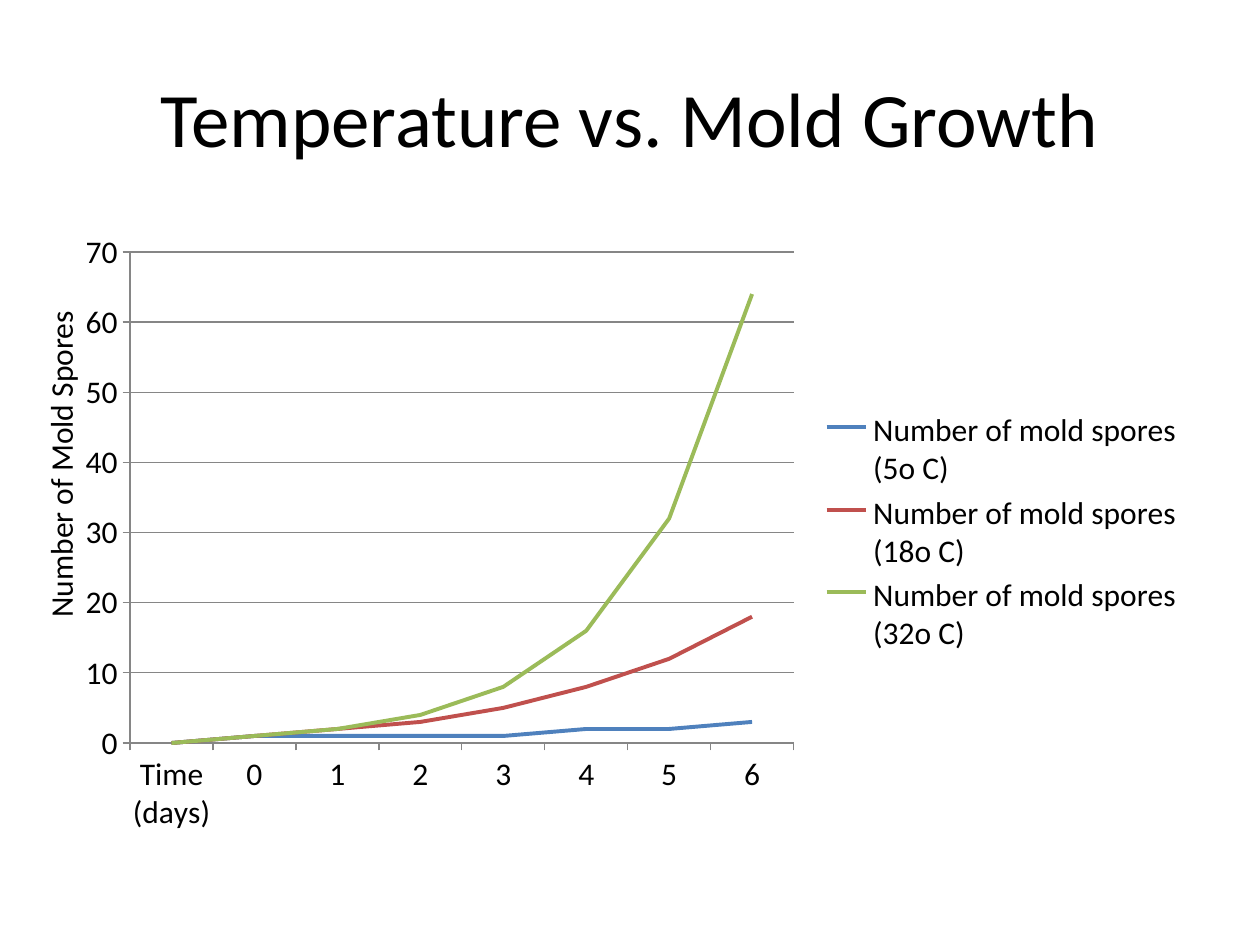
from pptx import Presentation
from pptx import util as u
from pptx.chart.data import CategoryChartData
from pptx.dml.color import RGBColor
from pptx.enum import chart as charts, text

DAYS = ["Time (days)", "0", "1", "2", "3", "4", "5", "6"]
SPORES = [
    ("5o C", "4F81BD", [0, 1, 1, 1, 1, 2, 2, 3]),
    ("18o C", "C0504D", [0, 1, 2, 3, 5, 8, 12, 18]),
    ("32o C", "9BBB59", [0, 1, 2, 4, 8, 16, 32, 64]),
]


def colour(code):
    return RGBColor.from_string(code)


class Painter:
    """Holds the style and the page being filled."""

    face = "Calibri"
    ink = "000000"
    grid = "868686"

    def __init__(self, page):
        self.page = page

    def style_font(self, font, size):
        font.name = self.face
        font.size = u.Pt(size)
        font.color.rgb = colour(self.ink)

    def style_line(self, line, code, width):
        line.color.rgb = colour(code)
        line.width = u.Pt(width)

    def label(self, words, area, size, align, anchor, turned=False):
        box = self.page.shapes.add_textbox(*map(u.Inches, area))
        frame = box.text_frame
        frame.word_wrap = True
        frame.vertical_anchor = anchor
        if turned:
            frame._txBody.bodyPr.set("vert", "vert270")
        para = frame.paragraphs[0]
        para.alignment = align
        span = para.add_run()
        span.text = words
        self.style_font(span.font, size)

    def line_chart(self, categories, rows, area, size):
        """Draw one line per row of (name, colour, values)."""
        data = CategoryChartData()
        data.categories = categories
        for name, _, values in rows:
            data.add_series(name, values)
        chart = self.page.shapes.add_chart(
            charts.XL_CHART_TYPE.LINE, *map(u.Inches, area), data).chart
        self.style_font(chart.font, size)
        chart.has_title = False
        chart.has_legend = True
        chart.legend.position = charts.XL_LEGEND_POSITION.RIGHT
        chart.legend.include_in_layout = False

        for axis in (chart.category_axis, chart.value_axis):
            axis.major_tick_mark = charts.XL_TICK_MARK.OUTSIDE
            axis.minor_tick_mark = charts.XL_TICK_MARK.NONE
            self.style_line(axis.format.line, self.grid, 0.75)
        chart.value_axis.has_major_gridlines = True
        self.style_line(chart.value_axis.major_gridlines.format.line, self.grid, 0.75)

        plot = chart.plots[0]
        plot.vary_by_categories = False
        for series, (_, code, _) in zip(plot.series, rows):
            series.smooth = False
            series.marker.style = charts.XL_MARKER_STYLE.NONE
            self.style_line(series.format.line, code, 2.25)


def main():
    deck = Presentation()
    deck.slide_width, deck.slide_height = u.Inches(10), u.Inches(7.5)
    painter = Painter(deck.slides.add_slide(deck.slide_layouts[6]))
    align, anchor = text.PP_ALIGN, text.MSO_ANCHOR

    painter.label("Temperature vs. Mold Growth", (0.5, 0.3, 9, 1.25), 44,
                  align.CENTER, anchor.MIDDLE)
    rows = [(f"Number of mold spores ({heat})", code, values)
            for heat, code, values in SPORES]
    painter.line_chart(DAYS, rows, (0.5, 1.75, 9, 4.95), 18)
    painter.label("Number of Mold Spores", (0.28, 2.06, 0.5, 2.94), 18,
                  align.LEFT, anchor.TOP, turned=True)
    deck.save("out.pptx")


if __name__ == "__main__":
    main()
